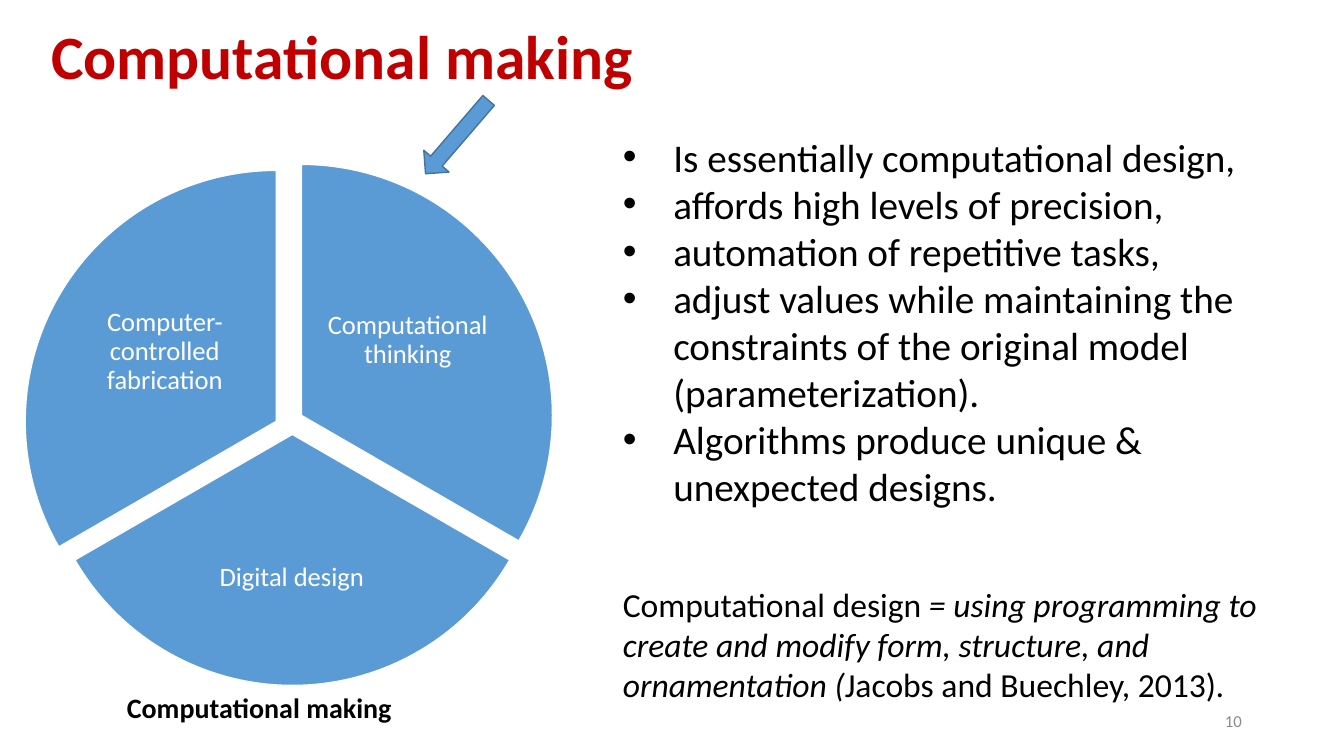
from lxml.etree import SubElement
from pptx import Presentation
from pptx.dml.color import RGBColor
from pptx.enum.shapes import MSO_SHAPE
from pptx.enum.text import MSO_ANCHOR, MSO_AUTO_SIZE, PP_ALIGN
from pptx.oxml.ns import qn
from pptx.util import Pt

RED = RGBColor(0xC0, 0x00, 0x00)
BLACK = RGBColor(0x00, 0x00, 0x00)
WHITE = RGBColor(0xFF, 0xFF, 0xFF)
GRAY = RGBColor(0x8C, 0x8C, 0x8C)
BLUE = RGBColor(0x5B, 0x9B, 0xD5)
DARK_BLUE = RGBColor(0x43, 0x73, 0x9E)

PIE_SIZE = 358.6
SLICES = [
    ("Computational thinking", 270, (36, 117.4), (230.4, 183.6, 121.7, 119.5)),
    ("Digital design", 30, (29.5, 131), (127.4, 357.1, 162, 110.9)),
    ("Computer-controlled fabrication", 150, (18, 121.7), (56.9, 191.5, 121.7, 119.5)),
]
BENEFITS = [
    "Is essentially computational design,",
    "affords high levels of precision,",
    "automation of repetitive tasks,",
    "adjust values while maintaining the constraints of the original model (parameterization).",
    "Algorithms produce unique & unexpected designs.",
]
DEFINITION = [
    ("Computational design ", False),
    ("= using programming to create and modify form, structure, and ornamentation (", True),
    ("Jacobs and Buechley, 2013)", False),
    (".", True),
]


def add_text_frame(slide, box, anchor=MSO_ANCHOR.TOP, inset=None, wrap=True, grow=False):
    """Add a text box and return its frame."""
    frame = slide.shapes.add_textbox(*map(Pt, box)).text_frame
    frame.word_wrap = wrap
    frame.auto_size = MSO_AUTO_SIZE.SHAPE_TO_FIT_TEXT if grow else MSO_AUTO_SIZE.NONE
    frame.vertical_anchor = anchor
    if inset is not None:
        frame.margin_left = frame.margin_right = Pt(inset)
        frame.margin_top = frame.margin_bottom = Pt(inset)
    return frame


def add_run(paragraph, wording, size, color, bold=False, italic=False):
    """Append one formatted run to a paragraph."""
    run = paragraph.add_run()
    run.text = wording
    run.font.name = "Calibri"
    run.font.size = Pt(size)
    run.font.color.rgb = color
    run.font.bold = bold
    run.font.italic = italic


def add_label(slide, box, wording, size, color, bold=False, align=PP_ALIGN.LEFT,
              spacing=None, **frame_options):
    """Add a text box holding a single run."""
    paragraph = add_text_frame(slide, box, **frame_options).paragraphs[0]
    paragraph.alignment = align
    paragraph.line_spacing = spacing
    add_run(paragraph, wording, size, color, bold)


def add_bullets(slide, box, items, size, indent):
    """Add a bulleted list with a hanging indent."""
    frame = add_text_frame(slide, box, grow=True)
    for index, item in enumerate(items):
        paragraph = frame.add_paragraph() if index else frame.paragraphs[0]
        properties = paragraph._p.get_or_add_pPr()
        properties.set("marL", str(Pt(indent)))
        properties.set("indent", str(-Pt(indent)))
        SubElement(properties, qn("a:buFont")).set("typeface", "Arial")
        SubElement(properties, qn("a:buChar")).set("char", "•")
        add_run(paragraph, item, size, BLACK)


def add_blue_shape(slide, kind, box, adjustments, line_color):
    """Add a blue preset shape with a thin outline."""
    shape = slide.shapes.add_shape(kind, *map(Pt, box))
    shape.shadow.inherit = False
    shape.fill.solid()
    shape.fill.fore_color.rgb = BLUE
    shape.line.color.rgb = line_color
    shape.line.width = Pt(1)
    for index, value in enumerate(adjustments):
        shape.adjustments[index] = value
    return shape


def add_slice(slide, name, start, corner, label_box):
    """Add a third of the pie, starting at an angle in degrees, and its label."""
    angles = [degrees * 0.6 for degrees in (start, (start + 120) % 360)]
    add_blue_shape(slide, MSO_SHAPE.PIE, (*corner, PIE_SIZE, PIE_SIZE), angles, WHITE)
    add_label(slide, label_box, name, 19, WHITE, align=PP_ALIGN.CENTER, spacing=0.9,
              anchor=MSO_ANCHOR.MIDDLE, inset=2)


def main():
    """Build and save the slide."""
    deck = Presentation()
    deck.slide_width, deck.slide_height = Pt(960), Pt(540)
    slide = deck.slides.add_slide(deck.slide_layouts[6])

    add_label(slide, (29.5, 8, 828, 68.4), "Computational making", 44, RED, bold=True,
              spacing=0.9, anchor=MSO_ANCHOR.MIDDLE)
    add_bullets(slide, (437.8, 91.4, 500.4, 278.6), BENEFITS, 28, 36)
    add_label(slide, (678.2, 500.4, 216, 28.8), "10", 12, GRAY, align=PP_ALIGN.RIGHT,
              anchor=MSO_ANCHOR.MIDDLE)
    for pie_slice in SLICES:
        add_slice(slide, *pie_slice)
    add_label(slide, (83.5, 489.6, 205.2, 31.7), "Computational making", 20, BLACK,
              bold=True, wrap=False, grow=True)

    definition = add_text_frame(slide, (437.8, 413.3, 480.2, 94.3), grow=True).paragraphs[0]
    for wording, italic in DEFINITION:
        add_run(definition, wording, 24, BLACK, italic=italic)

    arrow = add_blue_shape(slide, MSO_SHAPE.DOWN_ARROW, (314.6, 63.4, 23.8, 69.1),
                           (0.456, 0.5), DARK_BLUE)
    arrow.rotation = 40.7
    deck.save("out.pptx")


if __name__ == "__main__":
    main()
